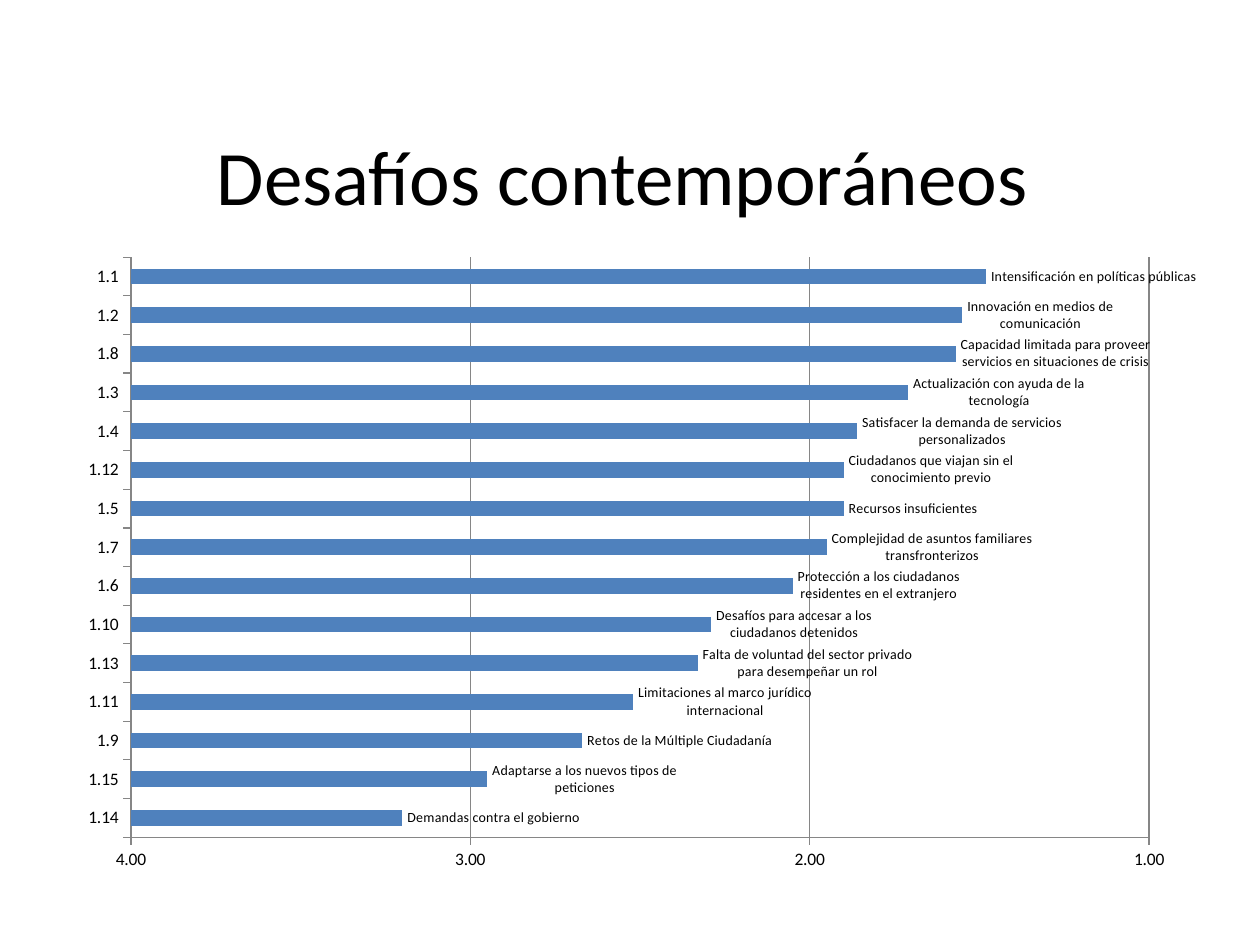
import pptx
import pptx.chart.data
import pptx.dml.color
import pptx.enum.chart
import pptx.enum.text
import pptx.oxml
import pptx.oxml.ns
import pptx.util

Pt = pptx.util.Pt
BLACK = pptx.dml.color.RGBColor(0x00, 0x00, 0x00)
BLUE = pptx.dml.color.RGBColor(0x4F, 0x81, 0xBD)
GRAY = pptx.dml.color.RGBColor(0x86, 0x86, 0x86)
FONT = "Calibri"

CHALLENGES = [
    ("1.14", 3.2, "Demandas contra el gobierno"),
    ("1.15", 2.95, "Adaptarse a los nuevos tipos de peticiones"),
    ("1.9", 2.67, "Retos de la Múltiple Ciudadanía"),
    ("1.11", 2.52, "Limitaciones al marco jurídico internacional"),
    ("1.13", 2.33, "Falta de voluntad del sector privado para desempeñar un rol"),
    ("1.10", 2.29, "Desafíos para accesar a los ciudadanos detenidos"),
    ("1.6", 2.05, "Protección a los ciudadanos residentes en el extranjero"),
    ("1.7", 1.95, "Complejidad de asuntos familiares transfronterizos"),
    ("1.5", 1.9, "Recursos insuficientes"),
    ("1.12", 1.9, "Ciudadanos que viajan sin el conocimiento previo"),
    ("1.4", 1.86, "Satisfacer la demanda de servicios personalizados"),
    ("1.3", 1.71, "Actualización con ayuda de la tecnología"),
    ("1.8", 1.57, "Capacidad limitada para proveer servicios en situaciones de crisis"),
    ("1.2", 1.55, "Innovación en medios de comunicación"),
    ("1.1", 1.48, "Intensificación en políticas públicas"),
]


def set_font(font, size):
    font.name = FONT
    font.size = Pt(size)
    font.color.rgb = BLACK


presentation = pptx.Presentation()
presentation.slide_width = Pt(720)
presentation.slide_height = Pt(540)
slide = presentation.slides.add_slide(presentation.slide_layouts[5])

title = slide.shapes.title
title.left, title.top, title.width, title.height = Pt(36.7), Pt(54.7), Pt(648), Pt(90)
title.text_frame.text = "Desafíos contemporáneos "
title.text_frame.vertical_anchor = pptx.enum.text.MSO_ANCHOR.MIDDLE
paragraph = title.text_frame.paragraphs[0]
paragraph.alignment = pptx.enum.text.PP_ALIGN.CENTER
set_font(paragraph.font, 44)

chart_data = pptx.chart.data.CategoryChartData(number_format="0.00")
chart_data.categories = [number for number, score, challenge in CHALLENGES]
chart_data.add_series("Series 1", [score for number, score, challenge in CHALLENGES])
chart = slide.shapes.add_chart(
    pptx.enum.chart.XL_CHART_TYPE.BAR_CLUSTERED,
    Pt(36), Pt(139.7), Pt(648), Pt(364.3), chart_data,
).chart
chart.has_title = False
chart.has_legend = False
set_font(chart.font, 10)

plot = chart.plots[0]
plot.gap_width = 150
plot.vary_by_categories = False
series = plot.series[0]
series.format.fill.solid()
series.format.fill.fore_color.rgb = BLUE

labels = series.data_labels
labels.show_value = True
labels.number_format = "0.00"
labels.number_format_is_linked = False
labels.position = pptx.enum.chart.XL_LABEL_POSITION.OUTSIDE_END
set_font(labels.font, 8)
for index, (number, score, challenge) in enumerate(CHALLENGES):
    label = series.points[index].data_label
    label.text_frame.text = challenge
    set_font(label.text_frame.paragraphs[0].runs[0].font, 8)
    label.position = pptx.enum.chart.XL_LABEL_POSITION.OUTSIDE_END

value_axis = chart.value_axis
value_axis.minimum_scale = 1
value_axis.maximum_scale = 4
value_axis.major_unit = 1
value_axis.reverse_order = True
value_axis.crosses = pptx.enum.chart.XL_AXIS_CROSSES.MAXIMUM
value_axis.has_major_gridlines = True
value_axis.tick_labels.number_format = "0.00"
value_axis.tick_labels.number_format_is_linked = False
for axis in (value_axis, chart.category_axis):
    axis.major_tick_mark = pptx.enum.chart.XL_TICK_MARK.OUTSIDE
    axis.minor_tick_mark = pptx.enum.chart.XL_TICK_MARK.NONE
    set_font(axis.tick_labels.font, 10)
for line in (value_axis.format.line, chart.category_axis.format.line,
             value_axis.major_gridlines.format.line):
    line.color.rgb = GRAY
    line.width = Pt(0.75)

plot_area = chart.element.find(".//" + pptx.oxml.ns.qn("c:plotArea"))
old_layout = plot_area.find(pptx.oxml.ns.qn("c:layout"))
if old_layout is not None:
    plot_area.remove(old_layout)
plot_area.insert(0, pptx.oxml.parse_xml(
    f'<c:layout {pptx.oxml.ns.nsdecls("c")}><c:manualLayout>'
    '<c:layoutTarget val="inner"/><c:xMode val="edge"/><c:yMode val="edge"/>'
    '<c:x val="0.06"/><c:y val="0.02"/><c:w val="0.9"/><c:h val="0.91"/>'
    '</c:manualLayout></c:layout>'
))

presentation.save("out.pptx")
